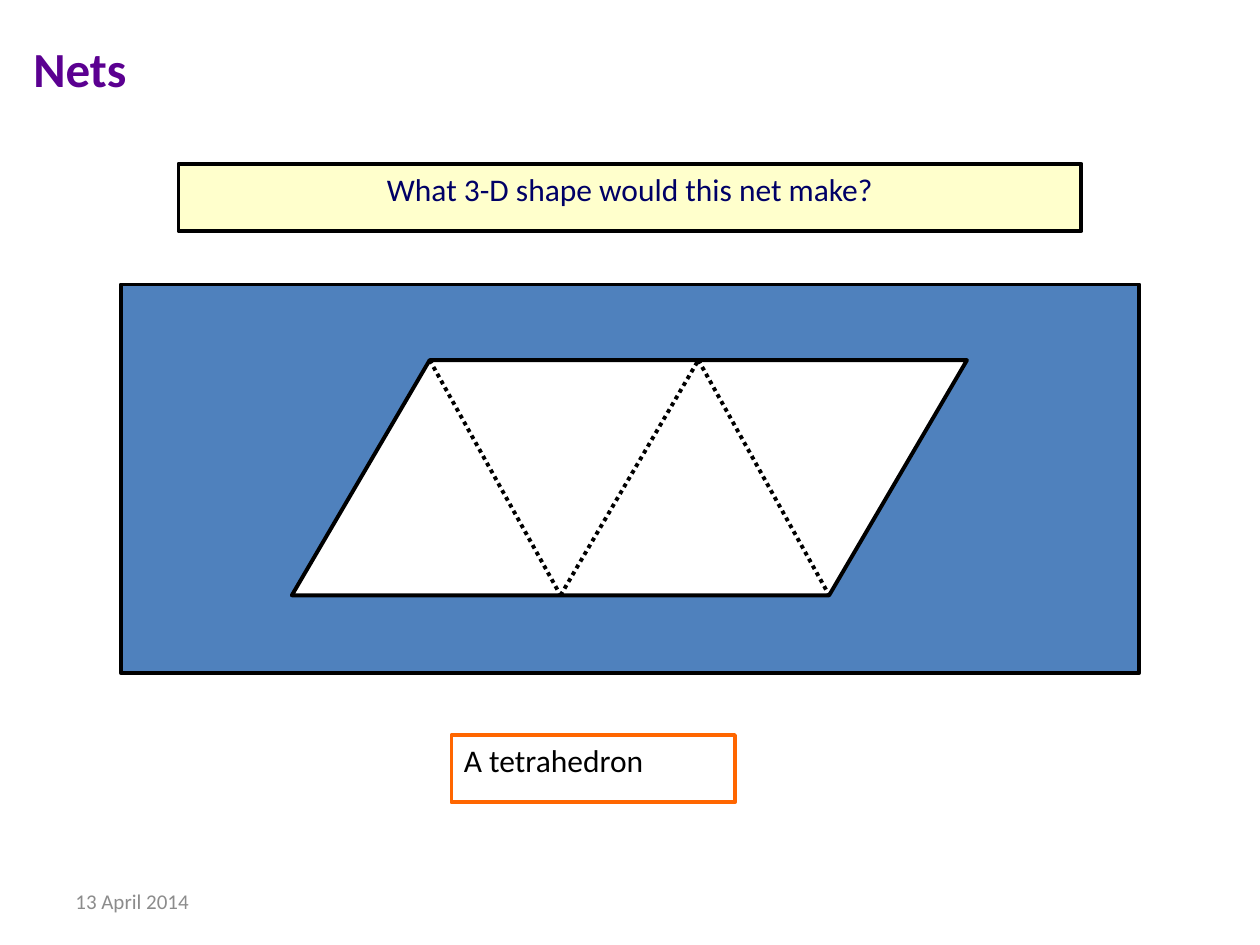
from dataclasses import dataclass
from typing import Optional

from lxml import etree
from pptx import Presentation
from pptx import util as u
from pptx.dml.color import RGBColor
from pptx.enum import dml, shapes, text
from pptx.oxml.ns import qn

# Grid of 120 columns by 90 rows on a 10 x 7.5 inch slide
WIDTH, HEIGHT = u.Inches(10), u.Inches(7.5)
COL, ROW = WIDTH / 120, HEIGHT / 90
LINE = u.Pt(2.25)
BLACK, WHITE = "000000", "FFFFFF"


@dataclass
class Box:
    """A place on the grid, in columns and rows."""
    x: float
    y: float
    w: float
    h: float

    def emu(self) -> tuple:
        return (round(self.x * COL), round(self.y * ROW),
                round(self.w * COL), round(self.h * ROW))


def rgb(hex_color: str) -> RGBColor:
    return RGBColor.from_string(hex_color)


def add_text(sp, content: str, *, size: float, color: str, bold: bool = False,
             align=text.PP_ALIGN.LEFT, anchor=text.MSO_ANCHOR.TOP) -> None:
    tf = sp.text_frame
    tf.word_wrap = True
    tf.vertical_anchor = anchor
    p = tf.paragraphs[0]
    p.alignment = align
    r = p.add_run()
    r.text = content
    r.font.name, r.font.size, r.font.bold = "Calibri", u.Pt(size), bold
    r.font.color.rgb = rgb(color)


def add_shape(s, box: Box, *, fill: Optional[str] = None, line: str = BLACK,
              kind=shapes.MSO_SHAPE.RECTANGLE):
    sp = s.shapes.add_shape(kind, *box.emu())
    sp.shadow.inherit = False
    if fill:
        sp.fill.solid()
        sp.fill.fore_color.rgb = rgb(fill)
    else:
        sp.fill.background()
    sp.line.color.rgb = rgb(line)
    sp.line.width = LINE
    return sp


def add_fold(s, start: tuple, end: tuple) -> None:
    (x1, y1), (x2, y2) = start, end
    c = s.shapes.add_connector(
        shapes.MSO_CONNECTOR.STRAIGHT,
        round(x1 * COL), round(y1 * ROW), round(x2 * COL), round(y2 * ROW))
    c.line.color.rgb = rgb(BLACK)
    c.line.width = LINE
    c.line.dash_style = dml.MSO_LINE.ROUND_DOT
    etree.SubElement(c._element.spPr, qn("a:effectLst"))


def add_net(s, box: Box, slant: float) -> None:
    """A parallelogram folded into four triangles."""
    sp = add_shape(s, box, fill=WHITE, kind=shapes.MSO_SHAPE.PARALLELOGRAM)
    sp.adjustments[0] = slant
    shift = slant * box.h
    half = (box.w - shift) / 2
    top, bottom = box.y, box.y + box.h
    # Folds zigzag from the top left corner to the bottom right one
    folds = [(box.x + shift, top), (box.x + half, bottom),
             (box.x + shift + half, top), (box.x + 2 * half, bottom)]
    for start, end in zip(folds, folds[1:]):
        add_fold(s, start, end)


def main() -> None:
    prs = Presentation()
    prs.slide_width, prs.slide_height = WIDTH, HEIGHT
    s = prs.slides.add_slide(prs.slide_layouts[6])

    # Title
    title = s.shapes.add_textbox(*Box(2, 2, 94, 9).emu())
    add_text(title, "Nets", size=28, color="5B0091", bold=True,
             anchor=text.MSO_ANCHOR.MIDDLE)

    # Panel with the net
    add_shape(s, Box(11.5, 27.1, 97, 37), fill="4F81BD")
    add_net(s, Box(27.8, 34.3, 64.3, 22.4), slant=0.586)

    # Question and answer
    question = add_shape(s, Box(17, 15.6, 86, 6.4), fill="FFFFCC")
    add_text(question, "What 3-D shape would this net make?", size=18,
             color="000066", align=text.PP_ALIGN.CENTER)
    answer = add_shape(s, Box(43, 70, 27, 6.4), line="FF6600")
    add_text(answer, "A tetrahedron", size=18, color=BLACK)

    # Date
    date = s.shapes.add_textbox(*Box(6, 83.4, 28, 4.8).emu())
    add_text(date, "13 April 2014", size=12, color="8C8C8C",
             anchor=text.MSO_ANCHOR.MIDDLE)

    prs.save("out.pptx")


if __name__ == "__main__":
    main()
